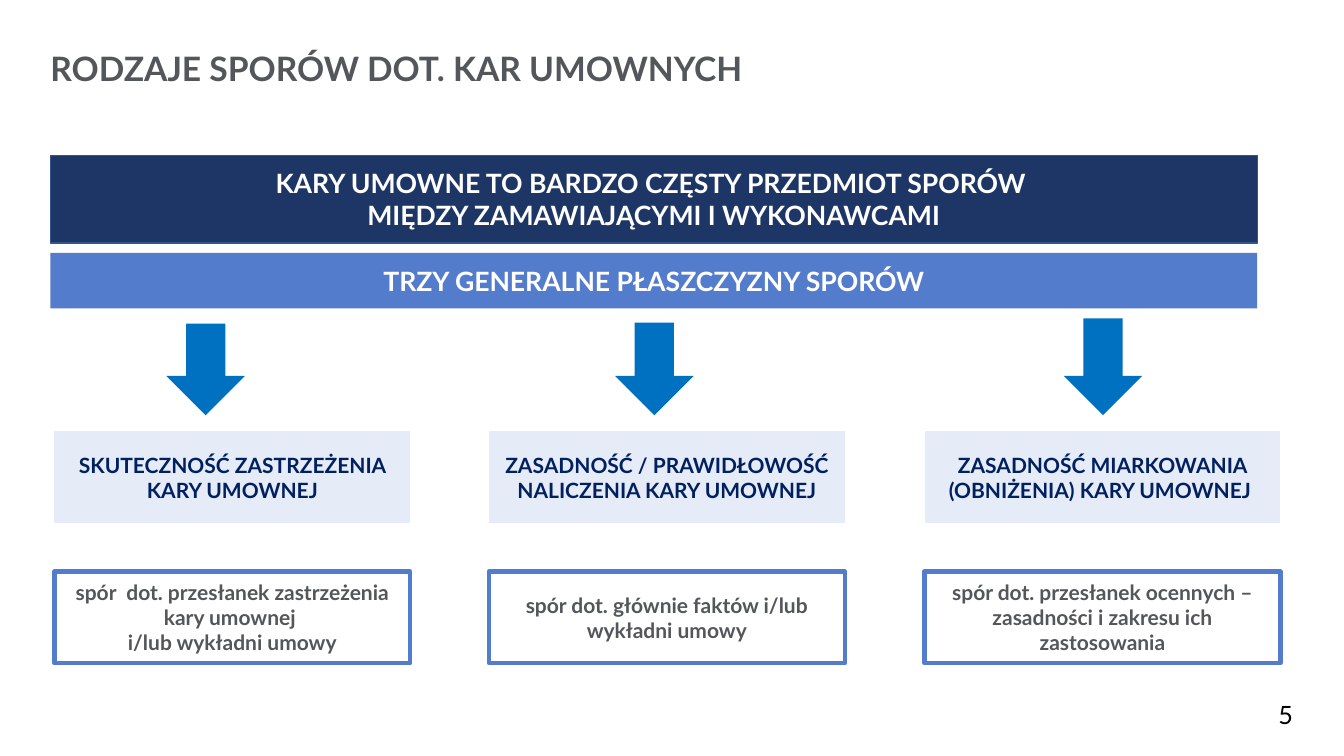
"""Build a slide on the kinds of disputes about contractual penalties."""
from pptx import Presentation
from pptx.dml.color import RGBColor
from pptx.enum import shapes, text
from pptx.util import Pt

PX = 9144
FONT = "Lato"
GREY = RGBColor(0x53, 0x56, 0x5A)
NAVY = RGBColor(0x1E, 0x36, 0x66)
NAVY_EDGE = RGBColor(0x32, 0x54, 0x91)
BLUE = RGBColor(0x53, 0x7C, 0xCD)
ARROW_BLUE = RGBColor(0x00, 0x70, 0xC0)
PALE = RGBColor(0xE5, 0xEB, 0xF7)
INK = RGBColor(0x00, 0x20, 0x60)
WHITE = RGBColor(0xFF, 0xFF, 0xFF)
BLACK = RGBColor(0, 0, 0)

COLUMNS = [
    ("SKUTECZNOŚĆ ZASTRZEŻENIA KARY UMOWNEJ",
     "spór  dot. przesłanek zastrzeżenia kary umownej \ni/lub wykładni umowy", 321),
    ("ZASADNOŚĆ / PRAWIDŁOWOŚĆ NALICZENIA KARY UMOWNEJ",
     "spór dot. głównie faktów i/lub wykładni umowy", 320),
    ("ZASADNOŚĆ MIARKOWANIA (OBNIŻENIA) KARY UMOWNEJ ",
     "spór dot. przesłanek ocennych – zasadności i zakresu ich zastosowania", 316),
]
ARROW_BOTTOM = 412


def emu(*lengths):
    """Turn px lengths into EMU."""
    return [length * PX for length in lengths]


def write(sp, words, size, color, bold=True, align=text.PP_ALIGN.CENTER):
    """Fill a shape with one formatted paragraph."""
    tf = sp.text_frame
    tf.word_wrap = True
    p = tf.paragraphs[0]
    p.text = words
    p.alignment = align
    for r in p.runs:
        r.font.name = FONT
        r.font.size = Pt(size)
        r.font.bold = bold
        r.font.color.rgb = color


def add_title(s, words):
    """Place and format the slide title."""
    sp = s.shapes.title
    sp.left, sp.top, sp.width, sp.height = emu(50, 48, 1058, 40)
    tf = sp.text_frame
    tf.margin_left = tf.margin_right = tf.margin_top = tf.margin_bottom = 0
    tf.vertical_anchor = text.MSO_ANCHOR.TOP
    tf.auto_size = text.MSO_AUTO_SIZE.NONE
    write(sp, words, 24, GREY, align=text.PP_ALIGN.LEFT)


def add_block(s, kind, box, fill=None, line=None, weight=1):
    """Add a flat preset shape."""
    sp = s.shapes.add_shape(kind, *emu(*box))
    sp.shadow.inherit = False
    if fill is None:
        sp.fill.background()
    else:
        sp.fill.solid()
        sp.fill.fore_color.rgb = fill
    if line is None:
        sp.line.fill.background()
    else:
        sp.line.color.rgb = line
        sp.line.width = Pt(weight)
    sp.text_frame.vertical_anchor = text.MSO_ANCHOR.MIDDLE
    return sp


def add_column(s, index, heading, detail, arrow_top):
    """Add an arrow, a heading box and a detail box."""
    kinds = shapes.MSO_SHAPE
    left = 54 + 863 * index // 2
    add_block(s, kinds.DOWN_ARROW,
              (165 + 445 * index, arrow_top, 78, ARROW_BOTTOM - arrow_top), ARROW_BLUE)
    sp = add_block(s, kinds.FLOWCHART_PROCESS, (left, 428, 353, 91), PALE)
    write(sp, heading, 15, INK)
    sp = add_block(s, kinds.RECTANGLE, (left, 567, 353, 91), line=BLUE, weight=3)
    write(sp, detail, 15, GREY)


def main():
    """Build and save the slide."""
    prs = Presentation()
    prs.slide_width, prs.slide_height = emu(1333, 750)
    s = prs.slides.add_slide(prs.slide_layouts[5])
    add_title(s, "RODZAJE SPORÓW DOT. KAR UMOWNYCH")

    rectangle = shapes.MSO_SHAPE.RECTANGLE
    sp = add_block(s, rectangle, (50, 154, 1197, 87), NAVY, NAVY_EDGE)
    write(sp, "KARY UMOWNE TO BARDZO CZĘSTY PRZEDMIOT SPORÓW \n"
              "MIĘDZY ZAMAWIAJĄCYMI I WYKONAWCAMI", 19, WHITE)
    sp = add_block(s, rectangle, (50, 251, 1197, 55), BLUE)
    write(sp, "TRZY GENERALNE PŁASZCZYZNY SPORÓW", 19, WHITE)

    for index, column in enumerate(COLUMNS):
        add_column(s, index, *column)

    sp = s.shapes.add_textbox(*emu(1258, 689, 44, 36))
    write(sp, "5", 18, BLACK, bold=False, align=text.PP_ALIGN.LEFT)
    prs.save("out.pptx")


if __name__ == "__main__":
    main()
